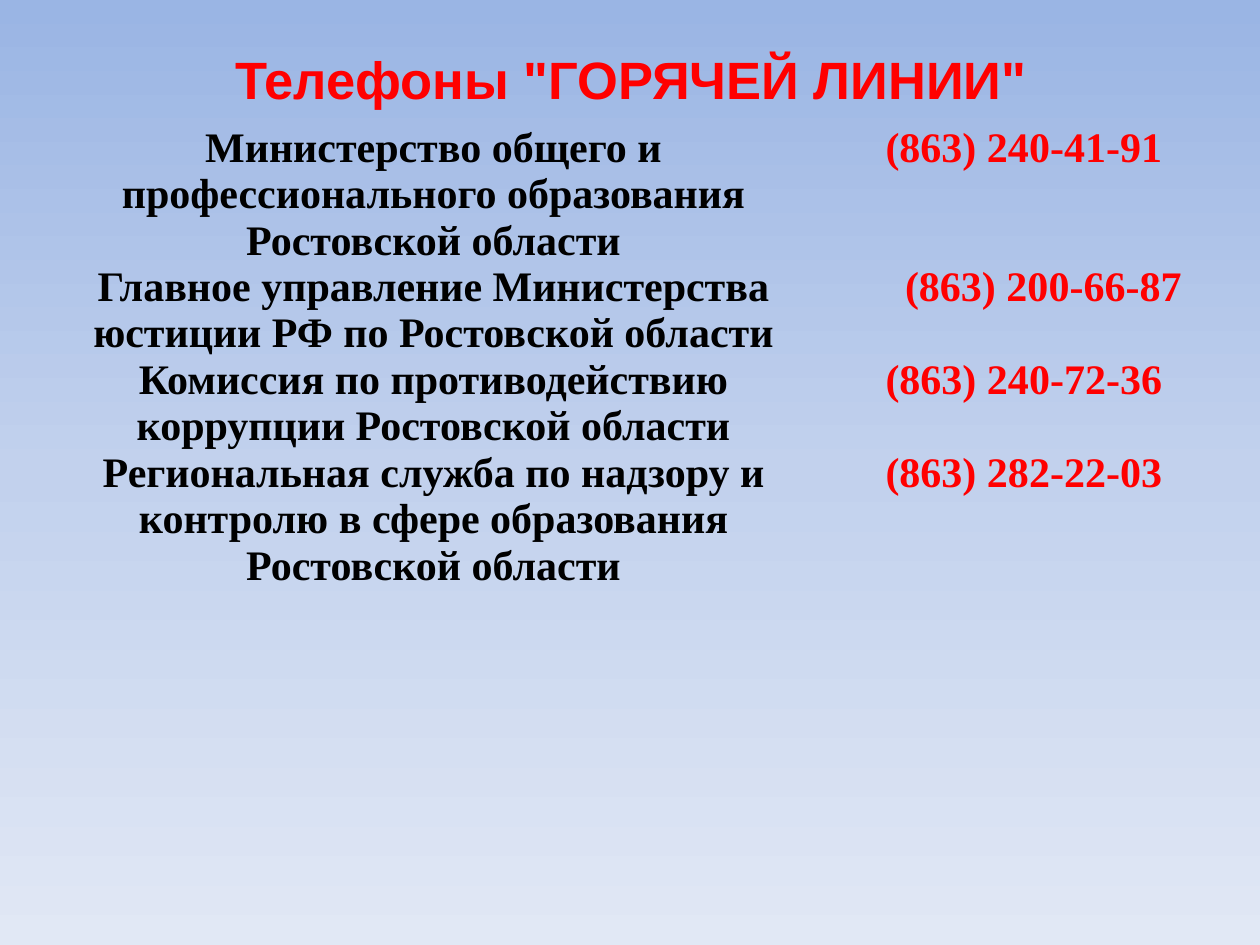
from copy import deepcopy

from pptx import Presentation
from pptx.dml.color import RGBColor
from pptx.enum.text import MSO_ANCHOR, PP_ALIGN
from pptx.oxml.ns import qn
from pptx.util import Inches, Pt

RED = "FF0000"
BLACK = "000000"
NO_GRID_STYLE = "{2D5ABB26-0587-4C30-8999-92F81FD0307C}"
BACKGROUND_STOPS = [(0, "9AB5E4"), (0.5, "C2D1ED"), (1, "E1E8F5")]
COLUMN_WIDTHS = [6.18, 3.19]
ROW_HEIGHTS = [0.85, 0.68, 0.68, 0.85, 0.68, 0.68]
PHONE_INDENTS = [0, 0.31, 0, 0]
HOTLINES = [
    ("Министерство общего и профессионального образования Ростовской области", "(863) 240-41-91"),
    ("Главное управление Министерства юстиции РФ по Ростовской области", "(863) 200-66-87"),
    ("Комиссия по противодействию коррупции Ростовской области", "(863) 240-72-36"),
    ("Региональная служба по надзору и контролю в сфере образования Ростовской области", "(863) 282-22-03"),
]


def color(value):
    """Return the colour for a hex string."""
    return RGBColor.from_string(value)


def format_paragraph(paragraph, font_name, size, font_color):
    """Centre a paragraph and set its bold font."""
    paragraph.alignment = PP_ALIGN.CENTER
    paragraph.font.name = font_name
    paragraph.font.size = Pt(size)
    paragraph.font.bold = True
    paragraph.font.color.rgb = color(font_color)


def paint_background(slide):
    """Fill the background with a vertical three-stop gradient."""
    fill = slide.background.fill
    fill.gradient()
    fill.gradient_angle = 270
    stop_list = slide.element.find(".//" + qn("a:gsLst"))
    stop_list.insert(1, deepcopy(stop_list[0]))
    for stop, (position, stop_color) in zip(fill.gradient_stops, BACKGROUND_STOPS):
        stop.position = position
        stop.color.rgb = color(stop_color)


def add_title(slide, text):
    """Place and format the title placeholder."""
    title = slide.shapes.title
    title.left, title.top = Inches(0.51), Inches(0)
    title.width, title.height = Inches(9), Inches(1.25)
    title.text_frame.text = text
    title.text_frame.vertical_anchor = MSO_ANCHOR.MIDDLE
    paragraph = title.text_frame.paragraphs[0]
    paragraph.space_after = Pt(15)
    format_paragraph(paragraph, "Arial", 30, RED)


def fill_cell(cell, text, font_color, bottom=0, indent=0):
    """Write formatted text into a table cell."""
    cell.margin_left = cell.margin_top = cell.margin_right = Inches(0)
    cell.margin_bottom = Inches(bottom)
    cell.text = text
    paragraph = cell.text_frame.paragraphs[0]
    if indent:
        properties = paragraph._p.get_or_add_pPr()
        properties.set("marL", str(Inches(indent)))
        properties.set("indent", "0")
    format_paragraph(paragraph, "Times New Roman", 24, font_color)


def add_hotline_table(slide):
    """Add the plain table of organisations and phone numbers."""
    frame = slide.shapes.add_table(
        len(ROW_HEIGHTS), len(COLUMN_WIDTHS),
        Inches(0.35), Inches(0.99), Inches(sum(COLUMN_WIDTHS)), Inches(sum(ROW_HEIGHTS)),
    )
    table = frame.table
    table.first_row = table.horz_banding = False
    table._tbl.tblPr.find(qn("a:tableStyleId")).text = NO_GRID_STYLE
    for column, width in zip(table.columns, COLUMN_WIDTHS):
        column.width = Inches(width)
    for row, height in zip(table.rows, ROW_HEIGHTS):
        row.height = Inches(height)
    for cell in table.iter_cells():
        cell.fill.background()
    for row, (organisation, phone), indent in zip(table.rows, HOTLINES, PHONE_INDENTS):
        fill_cell(row.cells[0], organisation, BLACK)
        fill_cell(row.cells[1], phone, RED, bottom=0.31, indent=indent)


def main():
    """Build and save the hotline slide."""
    presentation = Presentation()
    presentation.slide_width = Inches(10)
    presentation.slide_height = Inches(7.5)
    slide = presentation.slides.add_slide(presentation.slide_layouts[5])
    paint_background(slide)
    add_title(slide, 'Телефоны "ГОРЯЧЕЙ ЛИНИИ"')
    add_hotline_table(slide)
    presentation.save("out.pptx")


if __name__ == "__main__":
    main()
